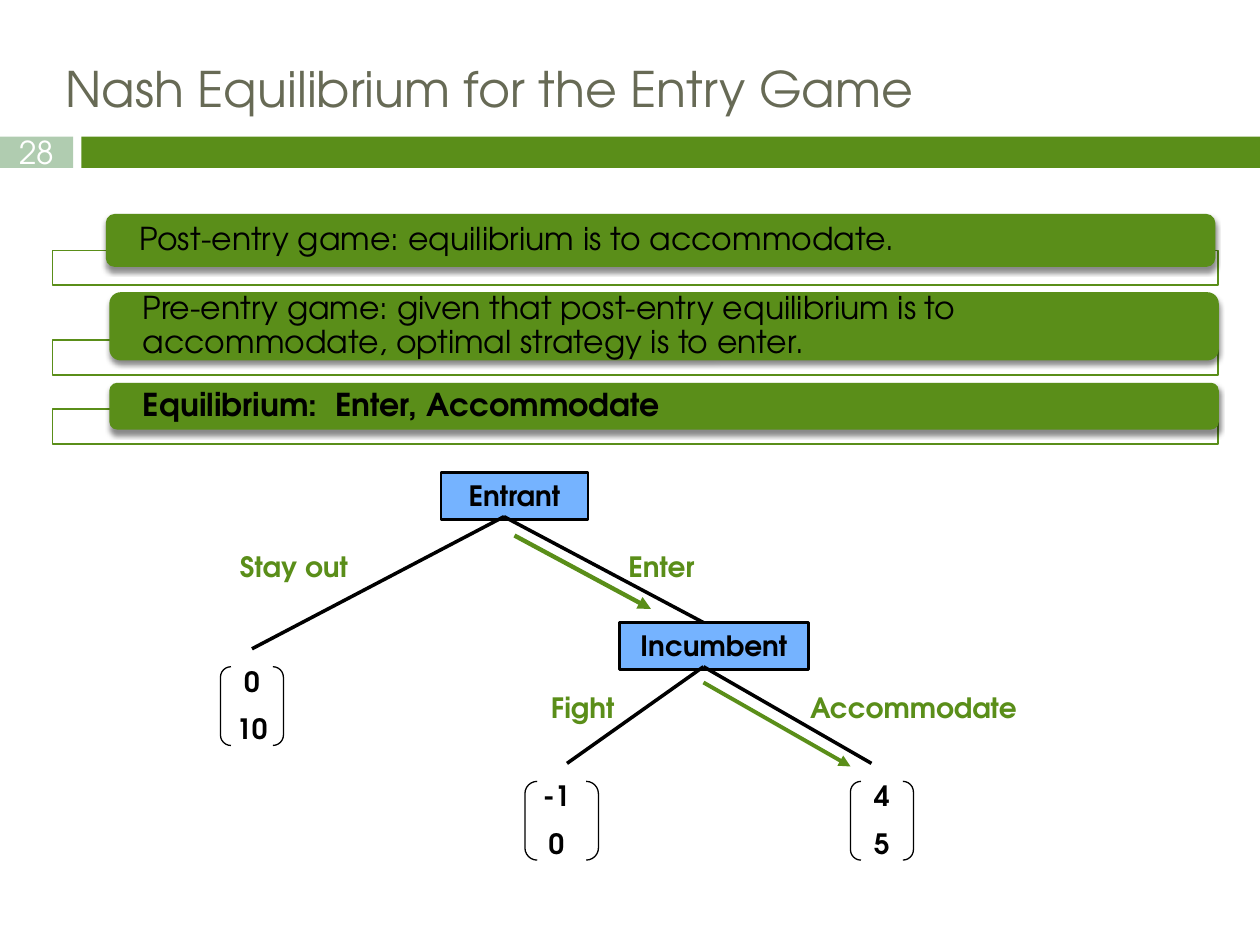
from lxml import etree
from pptx import Presentation
from pptx.dml.color import RGBColor
from pptx.enum import shapes, text
from pptx.oxml import ns
from pptx.util import Pt

FONT = "TeX Gyre Adventor"
COLORS = {"green": "5A8E19", "sage": "B0CCB0", "title": "676A55",
          "blue": "75B3FF", "black": "000000", "white": "FFFFFF"}
SHAPE = shapes.MSO_SHAPE
ALIGN = text.PP_ALIGN
ANCHOR = text.MSO_ANCHOR


def rgb(name):
    return RGBColor.from_string(COLORS[name])


def sub(parent, tag, **attrs):
    return etree.SubElement(parent, ns.qn(tag), attrs)


def add_box(s, kind, x, y, w, h, fill=None, line=None, width=0.75):
    sp = s.shapes.add_shape(kind, Pt(x), Pt(y), Pt(w), Pt(h))
    sp.shadow.inherit = False
    if fill:
        sp.fill.solid()
        sp.fill.fore_color.rgb = rgb(fill)
    else:
        sp.fill.background()
    if line:
        sp.line.color.rgb = rgb(line)
        sp.line.width = Pt(width)
    else:
        sp.line.fill.background()
    return sp


def add_text_box(s, x, y, w, h):
    return s.shapes.add_textbox(Pt(x), Pt(y), Pt(w), Pt(h))


def write(sp, lines, size, color, bold=False, align=ALIGN.CENTER,
          anchor=ANCHOR.TOP, insets=(7.2, 3.6)):
    tf = sp.text_frame
    tf.word_wrap = True
    tf.auto_size = text.MSO_AUTO_SIZE.NONE
    tf.vertical_anchor = anchor
    tf.margin_left = tf.margin_right = Pt(insets[0])
    tf.margin_top = tf.margin_bottom = Pt(insets[1])
    for i, line in enumerate(lines):
        p = tf.add_paragraph() if i else tf.paragraphs[0]
        p.alignment = align
        if i:
            p.space_before = Pt(size / 2)
        r = p.add_run()
        r.text = line
        r.font.name, r.font.size, r.font.bold = FONT, Pt(size), bold
        r.font.color.rgb = rgb(color)
    return tf


def add_line(s, start, end, color="black", width=2, arrow=False):
    cx = s.shapes.add_connector(shapes.MSO_CONNECTOR.STRAIGHT,
                                *(Pt(v) for v in (*start, *end)))
    cx.line.color.rgb = rgb(color)
    cx.line.width = Pt(width)
    if arrow:
        sub(cx.line._get_or_add_ln(), "a:tailEnd", type="triangle")
    sub(cx._element.spPr, "a:effectLst")


def add_header(s, x, y, w, h, title, number):
    # Title above a full-width band with the page number
    sp = s.shapes.title
    sp.left, sp.top, sp.width, sp.height = Pt(x + 30), Pt(y + 30), Pt(w - 36), Pt(47)
    write(sp, [title], 28, "title", align=ALIGN.LEFT)
    band_h = 18
    band_y = y + h - band_h
    add_box(s, SHAPE.RECTANGLE, x + 46.5, band_y, w - 46.5, band_h, "green")
    badge = add_box(s, SHAPE.RECTANGLE, x, band_y, 41.75, band_h, "sage")
    write(badge, [number], 18, "white", anchor=ANCHOR.MIDDLE, insets=(0, 0))


def add_card(s, x, y, w, h, frame_y, indent, line, bold=False):
    # Outlined frame behind a shadowed card
    frame = add_box(s, SHAPE.RECTANGLE, x, frame_y, w, 20, "white", "green", 0.79)
    color = frame._element.spPr.find(".//" + ns.qn("a:srgbClr"))
    sub(color, "a:alpha", val="90000")
    card_w = 634
    card = add_box(s, SHAPE.ROUNDED_RECTANGLE, x + indent, y, card_w, h, "green")
    effects = card._element.spPr.find(ns.qn("a:effectLst"))
    shadow = sub(effects, "a:outerShdw", blurRad=str(Pt(3)), dist=str(Pt(2.4)),
                 dir="5400000", rotWithShape="0")
    sub(sub(shadow, "a:srgbClr", val=COLORS["black"]), "a:alpha", val="45000")
    pad = 1.75
    label = add_text_box(s, x + indent + pad, y + pad, card_w - 2 * pad, h - 2 * pad)
    tf = write(label, [line], 18, "black", bold, ALIGN.LEFT, ANCHOR.MIDDLE, (17.25, 0))
    tf.paragraphs[0].line_spacing = 0.9


def add_cards(s, x, y, w):
    # Rows: top, height, frame top, card indent, text, bold
    rows = [
        (0, 30.25, 20.75, 30.5, "Post-entry game: equilibrium is to accommodate.", False),
        (44.75, 39, 72, 32.5, "Pre-entry game: given that post-entry equilibrium is to "
         "accommodate, optimal strategy is to enter.", False),
        (96.5, 26.75, 111.5, 32.5, "Equilibrium:  Enter, Accommodate", True),
    ]
    for top, h, frame_top, indent, line, bold in rows:
        add_card(s, x, y + top, w, h, y + frame_top, indent, line, bold)


def add_game_tree(s, x, y):
    def at(point):
        return x + point[0], y + point[1]

    entrant, incumbent = (198, 25.25), (312, 111)

    # Players and branches
    add_player(s, *at((162, 0)), 84, "Entrant")
    add_line(s, at(entrant), at((312, 85.75)))
    add_player(s, *at((264, 85.75)), 108, "Incumbent")
    for start, end in [(incumbent, (408, 166.25)), (incumbent, (234, 166.25)),
                       (entrant, (54, 100.75))]:
        add_line(s, at(start), at(end))

    # Payoffs
    for left, top, bracket_w, values in [(30, 106, 36, ("0", "10")),
                                         (204, 171.5, 42, ("-1", "0")),
                                         (390, 171.5, 36, ("4", "5"))]:
        add_payoff(s, *at((left, top)), bracket_w, values)

    # Move labels
    for left, top, w, move in [(210, 40.25, 156, "Enter"), (0, 40.25, 156, "Stay out"),
                               (360, 121, 144, "Accommodate"), (186, 121, 114, "Fight")]:
        write(add_text_box(s, *at((left, top)), w, 22.25), [move], 16, "green", True)

    # Equilibrium path
    add_line(s, at((204, 36)), at((282, 78)), "green", 2.5, arrow=True)
    add_line(s, at((312, 120)), at((396, 168)), "green", 2.25, arrow=True)


def add_player(s, x, y, w, name):
    sp = add_box(s, SHAPE.RECTANGLE, x, y, w, 26.75, "blue", "black", 1.5)
    write(sp, [name], 16, "black", True)


def add_payoff(s, x, y, bracket_w, values):
    write(add_text_box(s, x, y, 48, 46.75), values, 16, "black", True)
    bracket = add_box(s, SHAPE.DOUBLE_BRACKET, x + 6, y + 5, bracket_w, 45, line="black")
    bracket.adjustments[0] = 0.167


def main():
    prs = Presentation()
    prs.slide_width, prs.slide_height = Pt(720), Pt(540)
    s = prs.slides.add_slide(prs.slide_layouts[5])
    add_header(s, 0, 0, 720, 96, "Nash Equilibrium for the Entry Game", "28")
    add_cards(s, 30, 122.25, 666)
    add_game_tree(s, 90, 270)
    prs.save("out.pptx")


if __name__ == "__main__":
    main()
